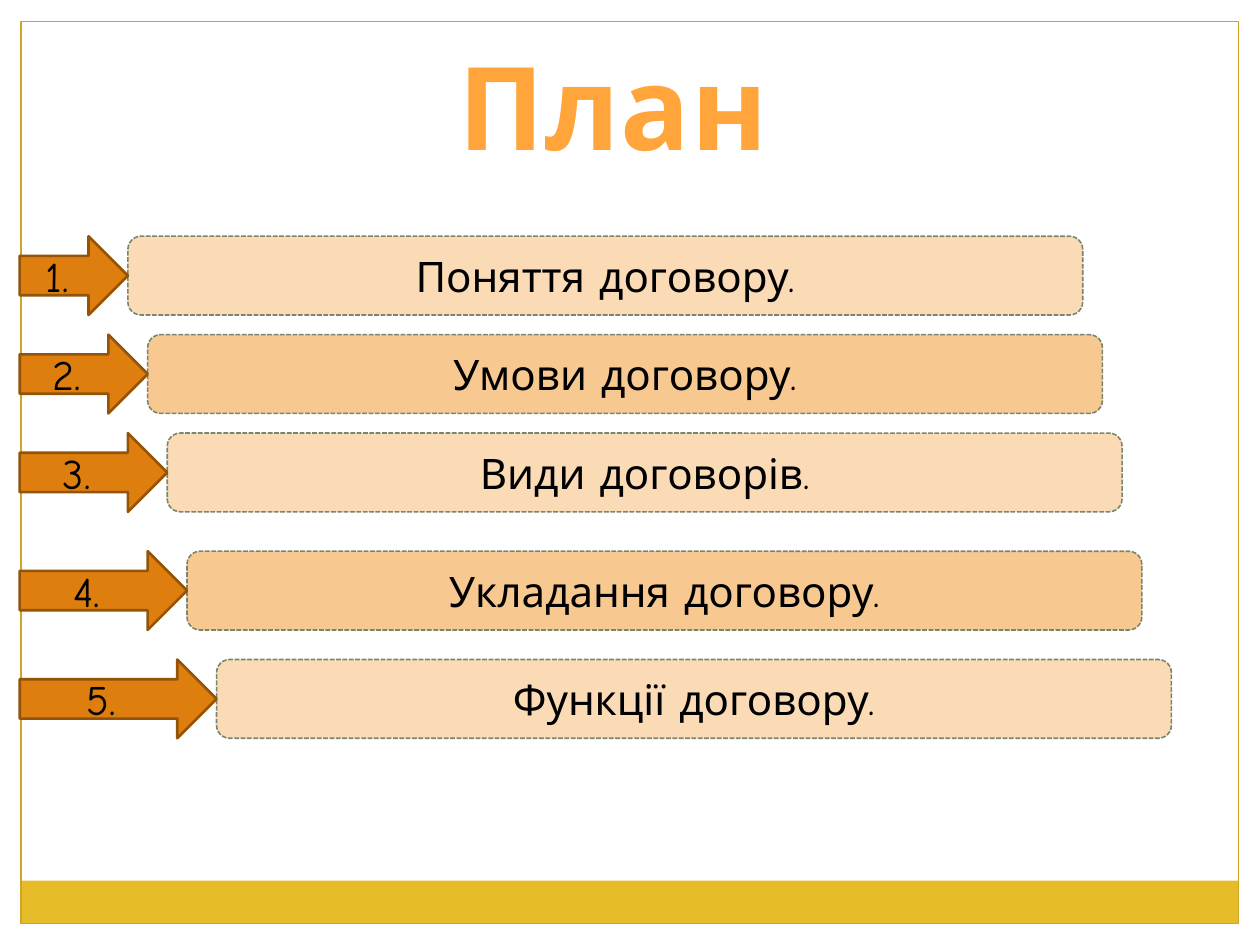
from typing import NamedTuple

from pptx import Presentation
from pptx.dml.color import RGBColor
from pptx.enum.dml import MSO_LINE
from pptx.enum.shapes import MSO_SHAPE
from pptx.enum.text import MSO_ANCHOR, PP_ALIGN
from pptx.util import Pt

FONT = "Comic Neue"
BLACK = RGBColor(0x00, 0x00, 0x00)
TITLE_ORANGE = RGBColor(0xFF, 0xA5, 0x3B)
FRAME_GOLD = RGBColor(0xCC, 0xA6, 0x24)
BAND_GOLD = RGBColor(0xE7, 0xBC, 0x29)
BAR_FILLS = (RGBColor(0xFA, 0xDB, 0xB5), RGBColor(0xF8, 0xC8, 0x91))
BAR_LINE = RGBColor(0x7A, 0x86, 0x6C)
ARROW_FILL = RGBColor(0xDD, 0x7E, 0x0E)
ARROW_LINE = RGBColor(0x93, 0x54, 0x0A)

ARROW_LEFT = 11.25
BAR_WIDTH = 545.6
ROW_HEIGHT = 45


class Box(NamedTuple):
    left: float
    top: float
    width: float
    height: float


class PlanItem(NamedTuple):
    topic: str
    left: float
    top: float


PLAN = (
    PlanItem("Поняття договору.", 73.1, 135),
    PlanItem("Умови договору.", 84.4, 191.25),
    PlanItem("Види договорів.", 95.6, 247.5),
    PlanItem("Укладання договору.", 106.9, 315),
    PlanItem("Функції договору.", 123.8, 376.9),
)


def add_block(slide, kind: MSO_SHAPE, box: Box, fill: RGBColor | None,
              line: RGBColor | None, line_width: float = 0.75):
    """Add a flat shape; None leaves out its fill or outline."""
    block = slide.shapes.add_shape(kind, *map(Pt, box))
    block.shadow.inherit = False
    if fill is None:
        block.fill.background()
    else:
        block.fill.solid()
        block.fill.fore_color.rgb = fill
    if line is None:
        block.line.fill.background()
    else:
        block.line.color.rgb = line
        block.line.width = Pt(line_width)
    return block


def write_centred(frame, text: str, size: float, color: RGBColor, bold: bool = False) -> None:
    frame.text = text
    paragraph = frame.paragraphs[0]
    paragraph.alignment = PP_ALIGN.CENTER
    paragraph.font.name = FONT
    paragraph.font.size = Pt(size)
    paragraph.font.bold = bold
    paragraph.font.color.rgb = color


def add_title(slide) -> None:
    title = slide.shapes.title
    title.left, title.top, title.width, title.height = map(Pt, Box(253.4, 16.6, 194.4, 87.1))
    frame = title.text_frame
    frame.word_wrap = False
    frame.vertical_anchor = MSO_ANCHOR.TOP
    write_centred(frame, "План", 66, TITLE_ORANGE, bold=True)
    frame.paragraphs[0].runs[0].font._element.set("spc", "50")


def add_bar(slide, item: PlanItem, fill: RGBColor) -> None:
    bar = add_block(slide, MSO_SHAPE.ROUNDED_RECTANGLE,
                    Box(item.left, item.top, BAR_WIDTH, ROW_HEIGHT), fill, BAR_LINE, 0.9)
    bar.line.dash_style = MSO_LINE.SQUARE_DOT
    bar.text_frame.word_wrap = True
    write_centred(bar.text_frame, item.topic, 24, BLACK)


def add_number_arrow(slide, item: PlanItem, number: int) -> None:
    arrow = add_block(slide, MSO_SHAPE.RIGHT_ARROW,
                      Box(ARROW_LEFT, item.top, item.left - ARROW_LEFT, ROW_HEIGHT),
                      ARROW_FILL, ARROW_LINE, 1.5)
    arrow.text_frame.word_wrap = True
    write_centred(arrow.text_frame, f"{number}. ", 24, BLACK)


def main() -> None:
    presentation = Presentation()
    presentation.slide_width, presentation.slide_height = Pt(720), Pt(540)
    slide = presentation.slides.add_slide(presentation.slide_layouts[5])

    add_block(slide, MSO_SHAPE.RECTANGLE, Box(11.8, 503.3, 695.6, 24.5), BAND_GOLD, None)
    add_block(slide, MSO_SHAPE.RECTANGLE, Box(12, 12.2, 695.6, 515.6), None, FRAME_GOLD)
    add_title(slide)
    for index, item in enumerate(PLAN):
        add_bar(slide, item, BAR_FILLS[index % 2])
    for number, item in enumerate(PLAN, start=1):
        add_number_arrow(slide, item, number)

    presentation.save("out.pptx")


if __name__ == "__main__":
    main()
